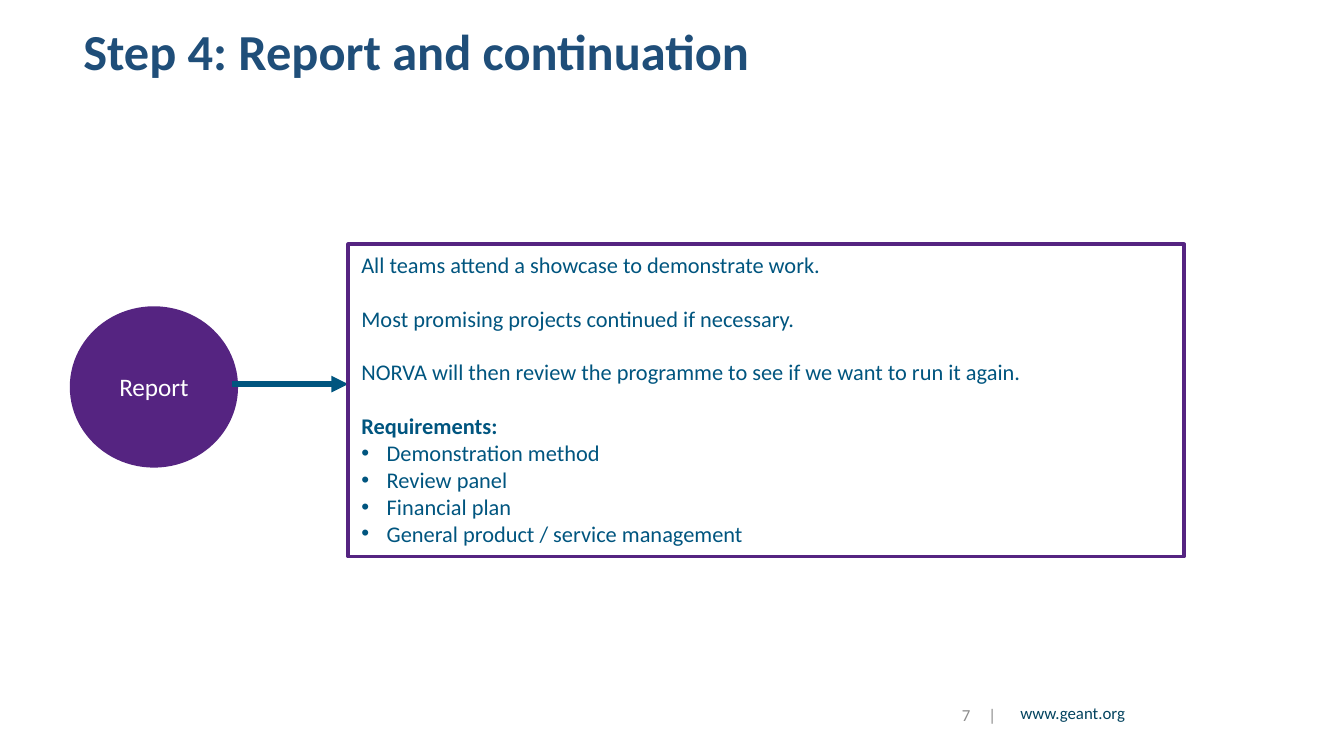
from pptx import Presentation
from pptx.dml.color import RGBColor
from pptx.enum.shapes import MSO_CONNECTOR, MSO_SHAPE
from pptx.enum.text import MSO_ANCHOR, MSO_AUTO_SIZE, PP_ALIGN
from pptx.oxml.ns import qn
from pptx.util import Cm, Pt
from lxml.etree import SubElement

TITLE = "Step 4: Report and continuation"
STAGE = "Report"
STATEMENTS = [
    "All teams attend a showcase to demonstrate work.",
    "Most promising projects continued if necessary.",
    "NORVA will then review the programme to see if we want to run it again.",
]
HEADING = "Requirements:"
REQUIREMENTS = [
    "Demonstration method",
    "Review panel",
    "Financial plan",
    "General product / service management",
]
PAGE_NUMBER = "7\t|"
WEBSITE = "www.geant.org"

PURPLE, TEAL, NAVY = "552481", "00557F", "1F4E79"
DARK_TEAL, GREY, WHITE = "03435F", "8C8C8C", "FFFFFF"
LINE_GAP = Pt(14.4)
BULLET_INDENT = Cm(0.48)
CIRCLE = (1.32, 5.79, 3.18, 3.05)
PANEL = (6.58, 4.62, 15.8, 5.9)
ARROW_START, ARROW_Y = 4.39, 7.26


def color(value):
    return RGBColor.from_string(value)


def lengths(box):
    return [Cm(value) for value in box]


def write(paragraph, text, size, value, bold=False, align=PP_ALIGN.LEFT):
    paragraph.alignment = align
    run = paragraph.add_run()
    run.text = text
    run.font.name = "Calibri"
    run.font.size = Pt(size)
    run.font.bold = bold
    run.font.color.rgb = color(value)


def add_bullet(paragraph):
    properties = paragraph._p.get_or_add_pPr()
    properties.set("marL", str(BULLET_INDENT))
    properties.set("indent", str(-BULLET_INDENT))
    SubElement(properties, qn("a:buFont"), typeface="Arial")
    SubElement(properties, qn("a:buChar"), char="•")


def add_plain_shape(slide, kind, box):
    shape = slide.shapes.add_shape(kind, *lengths(box))
    shape.shadow.inherit = False
    return shape


def add_title(slide):
    title = slide.shapes.title
    title.left, title.top, title.width, title.height = lengths((1.32, 0.58, 20.62, 0.89))
    frame = title.text_frame
    frame.auto_size = MSO_AUTO_SIZE.NONE
    frame.vertical_anchor = MSO_ANCHOR.MIDDLE
    frame.paragraphs[0].line_spacing = 0.9
    write(frame.paragraphs[0], TITLE, 27, NAVY, bold=True)


def add_stage(slide):
    circle = add_plain_shape(slide, MSO_SHAPE.OVAL, CIRCLE)
    circle.fill.solid()
    circle.fill.fore_color.rgb = color(PURPLE)
    circle.line.fill.background()
    frame = circle.text_frame
    frame.word_wrap = False
    frame.vertical_anchor = MSO_ANCHOR.MIDDLE
    write(frame.paragraphs[0], STAGE, 13.5, WHITE, align=PP_ALIGN.CENTER)


def add_arrow(slide):
    ends = lengths((ARROW_START, ARROW_Y, PANEL[0], ARROW_Y))
    arrow = slide.shapes.add_connector(MSO_CONNECTOR.STRAIGHT, *ends)
    arrow.line.width = Pt(3)
    arrow.line.color.rgb = color(TEAL)
    SubElement(arrow.line._get_or_add_ln(), qn("a:tailEnd"), type="triangle")
    SubElement(arrow._element.spPr, qn("a:effectLst"))


def add_panel(slide):
    panel = add_plain_shape(slide, MSO_SHAPE.RECTANGLE, PANEL)
    panel.fill.background()
    panel.line.color.rgb = color(PURPLE)
    panel.line.width = Pt(2)
    frame = panel.text_frame
    frame.word_wrap = True
    frame.vertical_anchor = MSO_ANCHOR.TOP
    for index, text in enumerate(STATEMENTS + [HEADING]):
        paragraph = frame.add_paragraph() if index else frame.paragraphs[0]
        if index:
            paragraph.space_before = LINE_GAP
        write(paragraph, text, 12, TEAL, bold=text == HEADING)
    for text in REQUIREMENTS:
        paragraph = frame.add_paragraph()
        add_bullet(paragraph)
        write(paragraph, text, 12, TEAL)


def add_footer(slide):
    website = slide.shapes.add_textbox(*lengths((18.31, 13.16, 3.2, 0.69))).text_frame
    website.word_wrap = True
    write(website.paragraphs[0], WEBSITE, 9, DARK_TEAL, align=PP_ALIGN.RIGHT)

    number = slide.shapes.add_textbox(*lengths((17.7, 13.16, 1.4, 0.69))).text_frame
    number.word_wrap = True
    number.vertical_anchor = MSO_ANCHOR.MIDDLE
    number.margin_left = Cm(0.48)
    number.margin_right = 0
    properties = number.paragraphs[0]._p.get_or_add_pPr()
    tabs = SubElement(properties, qn("a:tabLst"))
    SubElement(tabs, qn("a:tab"), pos=str(Cm(0.5)), algn="l")
    write(number.paragraphs[0], PAGE_NUMBER, 9, GREY)


def main():
    presentation = Presentation()
    presentation.slide_width = Cm(25.4)
    presentation.slide_height = Cm(14.29)
    slide = presentation.slides.add_slide(presentation.slide_layouts[5])
    add_title(slide)
    add_stage(slide)
    add_arrow(slide)
    add_panel(slide)
    add_footer(slide)
    presentation.save("out.pptx")


if __name__ == "__main__":
    main()
